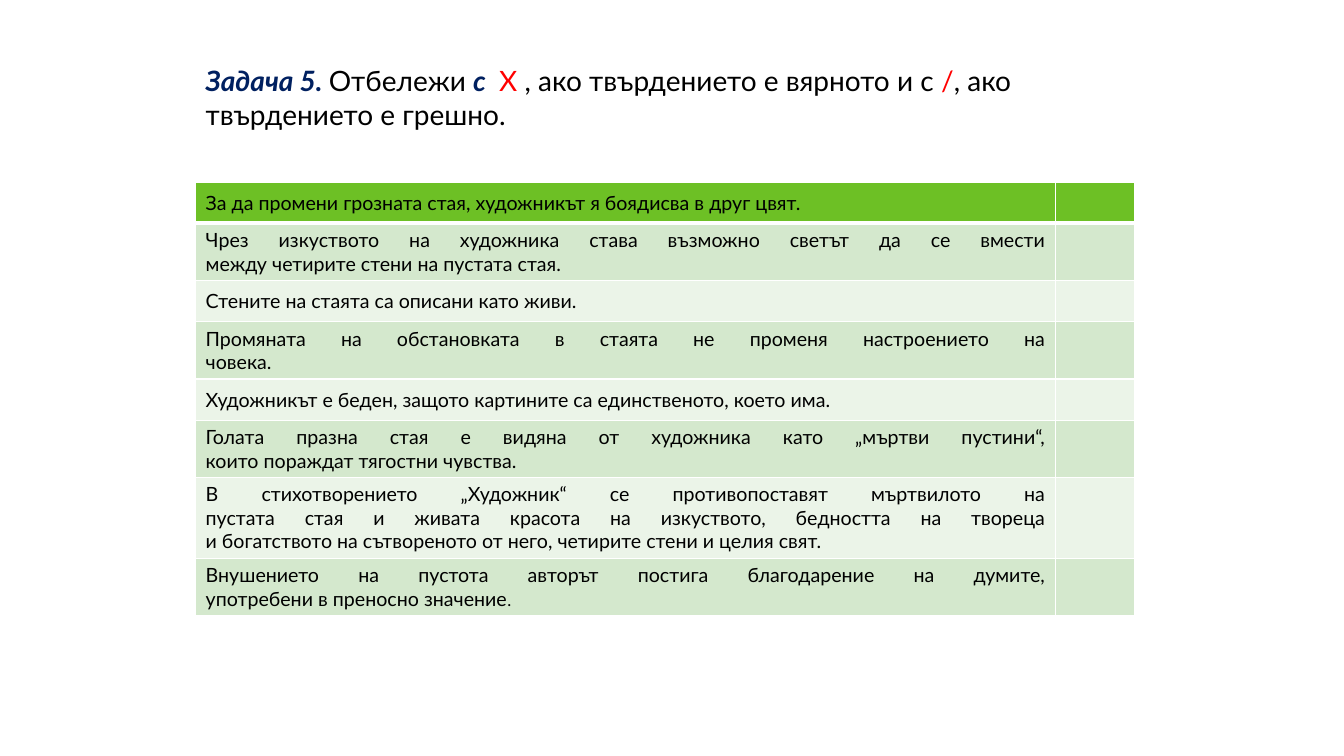
from dataclasses import dataclass

from lxml.etree import SubElement
from pptx import Presentation
from pptx.dml.color import RGBColor
from pptx.enum.text import MSO_ANCHOR, MSO_AUTO_SIZE, PP_ALIGN
from pptx.oxml.ns import qn
from pptx.util import Inches, Pt


@dataclass(frozen=True)
class Theme:
    font: str = "Lato"
    ink: str = "000000"
    navy: str = "002060"
    red: str = "FF0000"
    line: str = "FFFFFF"
    head: str = "6DC025"
    bands: tuple = ("D4E8CD", "EBF4E8")
    title: int = 20
    body: int = 14
    small: int = 12


THEME = Theme()

CLAIMS = [
    "За да промени грозната стая, художникът я боядисва в друг цвят.",
    "Чрез изкуството на художника става възможно светът да се вмести\n"
    "между четирите стени на пустата стая.",
    "Стените на стаята са описани като живи.",
    "Промяната на обстановката в стаята не променя настроението на\n"
    "човека.",
    "Художникът е беден, защото картините са единственото, което има.",
    "Голата празна стая е видяна от художника като „мъртви пустини“,\n"
    "които пораждат тягостни чувства.",
    "В стихотворението „Художник“ се противопоставят мъртвилото на\n"
    "пустата стая и живата красота на изкуството, бедността на твореца\n"
    "и богатството на сътвореното от него, четирите стени и целия свят.",
    "Внушението на пустота авторът постига благодарение на думите,\n"
    "употребени в преносно значение",
]


def put(para, text, size=THEME.body, color=THEME.ink, strong=False):
    """Add text to a paragraph; each newline becomes a line break."""
    for i, part in enumerate(text.split("\n")):
        if i:
            para.add_line_break()
        run = para.add_run()
        run.text = part
        font = run.font
        font.name, font.size = THEME.font, Pt(size)
        font.bold = font.italic = strong
        font.color.rgb = RGBColor.from_string(color)


def edge(cell, side, width):
    line = SubElement(cell._tc.get_or_add_tcPr(), qn(f"a:ln{side}"), w=str(Pt(width)))
    fill = SubElement(line, qn("a:solidFill"))
    SubElement(fill, qn("a:srgbClr"), val=THEME.line)


def paint(cell, color, top, bottom):
    # Borders come before the fill in the cell properties
    for side, width in (("L", 1), ("R", 1), ("T", top), ("B", bottom)):
        edge(cell, side, width)
    cell.fill.solid()
    cell.fill.fore_color.rgb = RGBColor.from_string(color)
    cell.vertical_anchor = MSO_ANCHOR.MIDDLE


def add_title(slide):
    box = slide.shapes.title
    box.left, box.top = Inches(1.94), Inches(0.58)
    box.width, box.height = Inches(10.13), Inches(1.08)
    frame = box.text_frame
    frame.word_wrap = True
    frame.auto_size = MSO_AUTO_SIZE.NONE
    frame.vertical_anchor = MSO_ANCHOR.TOP
    para = frame.paragraphs[0]
    para.alignment = PP_ALIGN.LEFT
    for text, color, strong in (
        ("Задача 5. ", THEME.navy, True),
        ("Отбележи ", THEME.ink, False),
        ("с ", THEME.navy, True),
        (" Х ", THEME.red, False),
        (", ако твърдението е вярното и с ", THEME.ink, False),
        ("/", THEME.red, False),
        (", ако\nтвърдението е грешно.", THEME.ink, False),
    ):
        put(para, text, size=THEME.title, color=color, strong=strong)


def add_claims(slide):
    # Row height follows the number of text lines
    highs = [max(0.41, 0.1 + 0.7 * (claim.count("\n") + 1) / 3) for claim in CLAIMS]
    highs[0] = 0.39
    table = slide.shapes.add_table(
        len(CLAIMS), 2, Inches(1.94), Inches(1.81), Inches(9.31), Inches(sum(highs))
    ).table
    table.first_row = table.horz_banding = False
    table.columns[0].width, table.columns[1].width = Inches(8.53), Inches(0.78)

    for i, (claim, high) in enumerate(zip(CLAIMS, highs)):
        table.rows[i].height = Inches(high)
        color = THEME.bands[(i - 1) % 2] if i else THEME.head
        for cell in table.rows[i].cells:
            paint(cell, color, top=3 if i == 1 else 1, bottom=1 if i else 3)
        para = table.cell(i, 0).text_frame.paragraphs[0]
        para.alignment = PP_ALIGN.JUSTIFY
        put(para, claim)
    put(para, ".", size=THEME.small)  # the last full stop is smaller


def main():
    deck = Presentation()
    deck.slide_width, deck.slide_height = Inches(13.33), Inches(7.5)
    slide = deck.slides.add_slide(deck.slide_layouts[5])
    add_title(slide)
    add_claims(slide)
    deck.save("out.pptx")


if __name__ == "__main__":
    main()
